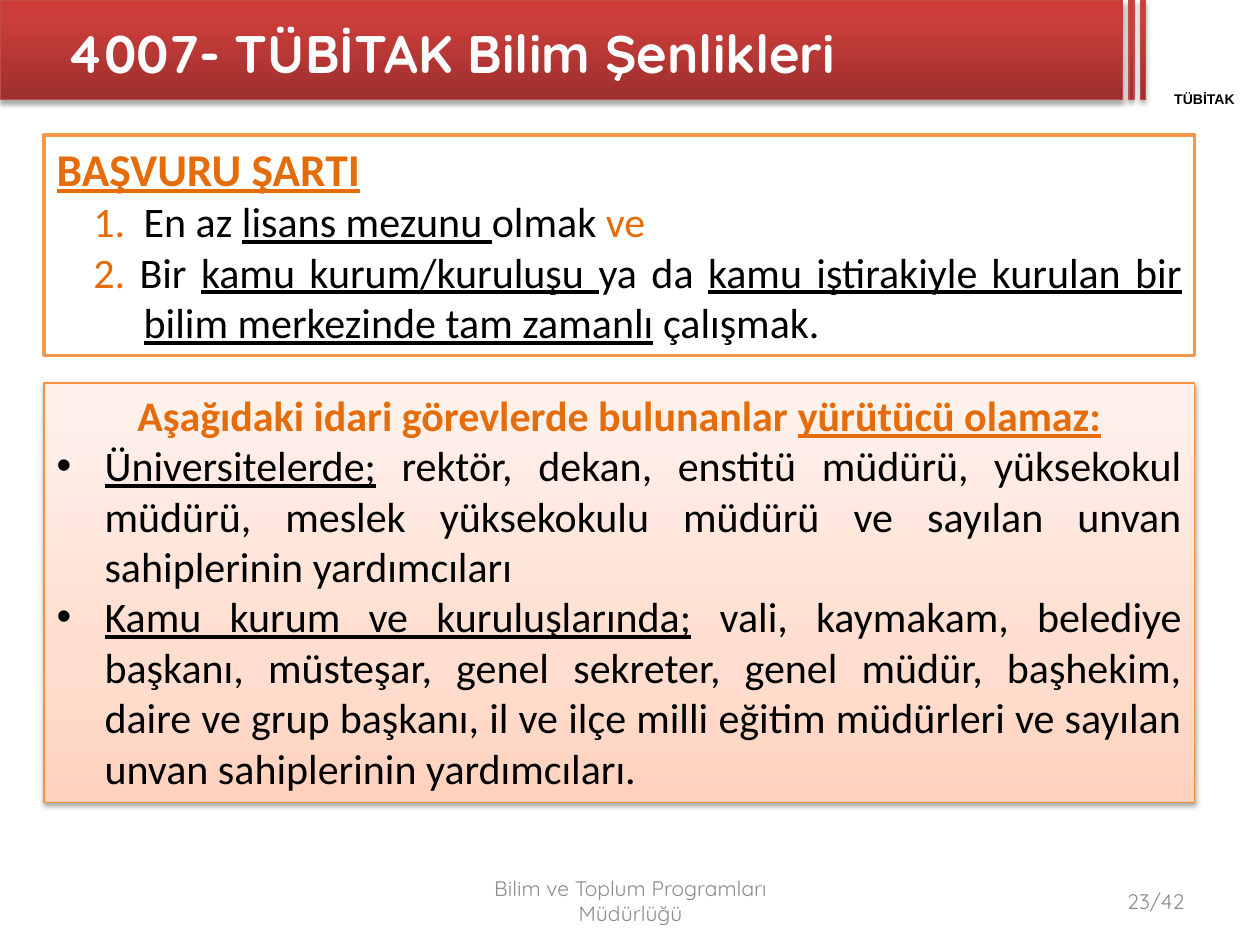
from lxml import etree
from pptx import Presentation, util as u
from pptx.dml.color import RGBColor
from pptx.enum import shapes, text
from pptx.oxml.ns import qn

COLORS = {
    "white": "FFFFFF", "black": "000000", "grey": "8C8C8C",
    "orange": "E46C0A", "frame": "F79646", "panel": "F69240", "band": "BF4C48",
}
BAND_STOPS = [(0, "9C2F2D"), (80, "CB3E3A"), (100, "CE3B37")]
PANEL_STOPS = [(0, "FFD2BD"), (35, "FFDED0"), (100, "FFF2ED")]
LEFT, CENTER, RIGHT, JUSTIFY = (
    text.PP_ALIGN.LEFT, text.PP_ALIGN.CENTER, text.PP_ALIGN.RIGHT, text.PP_ALIGN.JUSTIFY)

HEAD = {"size": 26, "color": "orange", "bold": True, "underline": True}
NOTICE = {"size": 24, "color": "orange", "bold": True}
ACCENT = {"size": 24, "color": "orange"}
PLAIN = {"size": 24}
LINED = {"size": 24, "underline": True}

CONDITIONS = [
    ({"alignment": LEFT}, [("BAŞVURU ŞARTI", HEAD)]),
    ({"alignment": JUSTIFY, "indent": (0.69, -0.4)}, [
        ("1.\t", ACCENT), ("En az ", PLAIN), ("lisans mezunu ", LINED),
        ("olmak ", PLAIN), ("ve", ACCENT)]),
    ({"alignment": JUSTIFY, "indent": (0.69, -0.4)}, [
        ("2. ", ACCENT), ("Bir ", PLAIN), ("kamu kurum/kuruluşu ", LINED), ("ya da ", PLAIN),
        ("kamu iştirakiyle kurulan bir bilim merkezinde tam zamanlı", LINED),
        (" çalışmak.", PLAIN)]),
]
BULLET = {"alignment": JUSTIFY, "indent": (0.38, -0.38), "bullet": "•"}
EXCLUSIONS = [
    ({"alignment": CENTER}, [
        ("Aşağıdaki idari görevlerde bulunanlar ", NOTICE),
        ("yürütücü olamaz:", {**NOTICE, "underline": True})]),
    (BULLET, [
        ("Üniversitelerde;", LINED),
        (" rektör, dekan, enstitü müdürü, yüksekokul müdürü, meslek yüksekokulu müdürü"
         " ve sayılan unvan sahiplerinin yardımcıları", PLAIN)]),
    (BULLET, [
        ("Kamu kurum ve kuruluşlarında;", LINED),
        (" vali, kaymakam, belediye başkanı, müsteşar, genel sekreter, genel müdür, başhekim,"
         " daire ve grup başkanı, il ve ilçe milli eğitim müdürleri ve sayılan unvan"
         " sahiplerinin yardımcıları.", PLAIN)]),
]


class SlideBuilder:
    def __init__(self, page):
        self.page = page
        self.style = {"name": "Calibri", "color": "black", "bold": False, "underline": False}

    def place(self, shape, area):
        for name, value in zip(("left", "top", "width", "height"), area):
            setattr(shape, name, u.Inches(value))

    def gradient(self, shape, stops):
        shape.fill.gradient()
        shape.fill.gradient_angle = 90
        stop_list = shape._element.spPr.find(".//" + qn("a:gsLst"))
        for old in list(stop_list):
            stop_list.remove(old)
        for position, color in stops:
            stop = etree.SubElement(stop_list, qn("a:gs"), pos=str(position * 1000))
            etree.SubElement(stop, qn("a:srgbClr"), val=color)

    def outline(self, shape, color, width):
        shape.line.color.rgb = RGBColor.from_string(COLORS[color])
        shape.line.width = u.Pt(width)

    def shadow(self, shape, opacity, distance):
        shape.shadow.inherit = False
        effects = shape._element.spPr.find(qn("a:effectLst"))
        outer = etree.SubElement(
            effects, qn("a:outerShdw"), blurRad=str(u.Pt(3.1)), dist=str(u.Pt(distance)),
            dir="5400000", rotWithShape="0")
        color = etree.SubElement(outer, qn("a:srgbClr"), val=COLORS["black"])
        etree.SubElement(color, qn("a:alpha"), val=str(opacity * 1000))

    def paragraph(self, para, layout, spans):
        properties = para._p.get_or_add_pPr()
        margin, indent = layout.get("indent", (0, 0))
        properties.set("marL", str(u.Inches(margin)))
        properties.set("indent", str(u.Inches(indent)))
        if "bullet" in layout:
            etree.SubElement(properties, qn("a:buFont"), typeface="Arial")
            etree.SubElement(properties, qn("a:buChar"), char=layout["bullet"])
        else:
            etree.SubElement(properties, qn("a:buNone"))
        para.alignment = layout["alignment"]
        para.space_before = u.Pt(0)
        for words, changes in spans:
            span = para.add_run()
            span.text = words
            values = {**self.style, **changes}
            span.font.color.rgb = RGBColor.from_string(COLORS[values.pop("color")])
            values["size"] = u.Pt(values["size"])
            for name, value in values.items():
                setattr(span.font, name, value)

    def fill_text(self, shape, paragraphs, **frame_values):
        frame = shape.text_frame
        values = {"word_wrap": True, "auto_size": text.MSO_AUTO_SIZE.NONE,
                  "vertical_anchor": text.MSO_ANCHOR.TOP, **frame_values}
        for name, value in values.items():
            setattr(frame, name, value)
        for index, (layout, spans) in enumerate(paragraphs):
            para = frame.add_paragraph() if index else frame.paragraphs[0]
            self.paragraph(para, layout, spans)

    def band(self, left, width):
        box = self.page.shapes.add_shape(shapes.MSO_SHAPE.RECTANGLE, 0, 0, 0, 0)
        self.place(box, (left, 0, width, 0.79))
        self.gradient(box, BAND_STOPS)
        self.outline(box, "band", 0.75)
        self.shadow(box, 35, 1.8)

    def title(self, words):
        title = self.page.shapes.title
        self.page.shapes._spTree.append(title._element)
        self.place(title, (0.43, 0.03, 8.5, 0.77))
        font = {"name": "Quicksand", "size": 30.2, "color": "white", "bold": True}
        self.fill_text(title, [({"alignment": LEFT}, [(words, font)])],
                       vertical_anchor=text.MSO_ANCHOR.MIDDLE)

    def label(self, area, words, alignment, font, **frame_values):
        box = self.page.shapes.add_textbox(0, 0, 0, 0)
        self.place(box, area)
        self.fill_text(box, [({"alignment": alignment}, [(words, font)])], **frame_values)

    def body(self, number, top, height, paragraphs):
        box = self.page.placeholders[number]
        self.place(box, (0.35, top, 9.13, height))
        self.fill_text(box, paragraphs)
        return box


def main():
    deck = Presentation()
    deck.slide_width, deck.slide_height = u.Inches(10), u.Inches(7.5)
    page = deck.slides.add_slide(deck.slide_layouts[3])
    builder = SlideBuilder(page)

    for left, width in ((0, 8.91), (8.96, 0.04), (9.05, 0.04)):
        builder.band(left, width)
    builder.title("4007- TÜBİTAK Bilim Şenlikleri")
    margins = dict.fromkeys(("margin_left", "margin_top", "margin_right", "margin_bottom"), 0)
    builder.label((9.05, 0.72, 1.02, 0.13), "TÜBİTAK", CENTER,
                  {"name": "Arial", "size": 8, "bold": True}, **margins)

    conditions = builder.body(1, 1.07, 1.75, CONDITIONS)
    conditions.fill.solid()
    conditions.fill.fore_color.rgb = RGBColor.from_string(COLORS["white"])
    builder.outline(conditions, "frame", 2)

    exclusions = builder.body(2, 3.04, 3.33, EXCLUSIONS)
    builder.gradient(exclusions, PANEL_STOPS)
    builder.outline(exclusions, "panel", 0.75)
    builder.shadow(exclusions, 38, 1.6)

    footer = {"name": "Quicksand", "size": 12, "color": "grey"}
    for left, width, words, alignment in (
            (3.42, 3.17, "Bilim ve Toplum Programları Müdürlüğü", CENTER),
            (7.17, 2.33, "23/42", RIGHT)):
        builder.label((left, 6.95, width, 0.4), words, alignment, footer,
                      vertical_anchor=text.MSO_ANCHOR.MIDDLE)
    deck.save("out.pptx")


if __name__ == "__main__":
    main()
